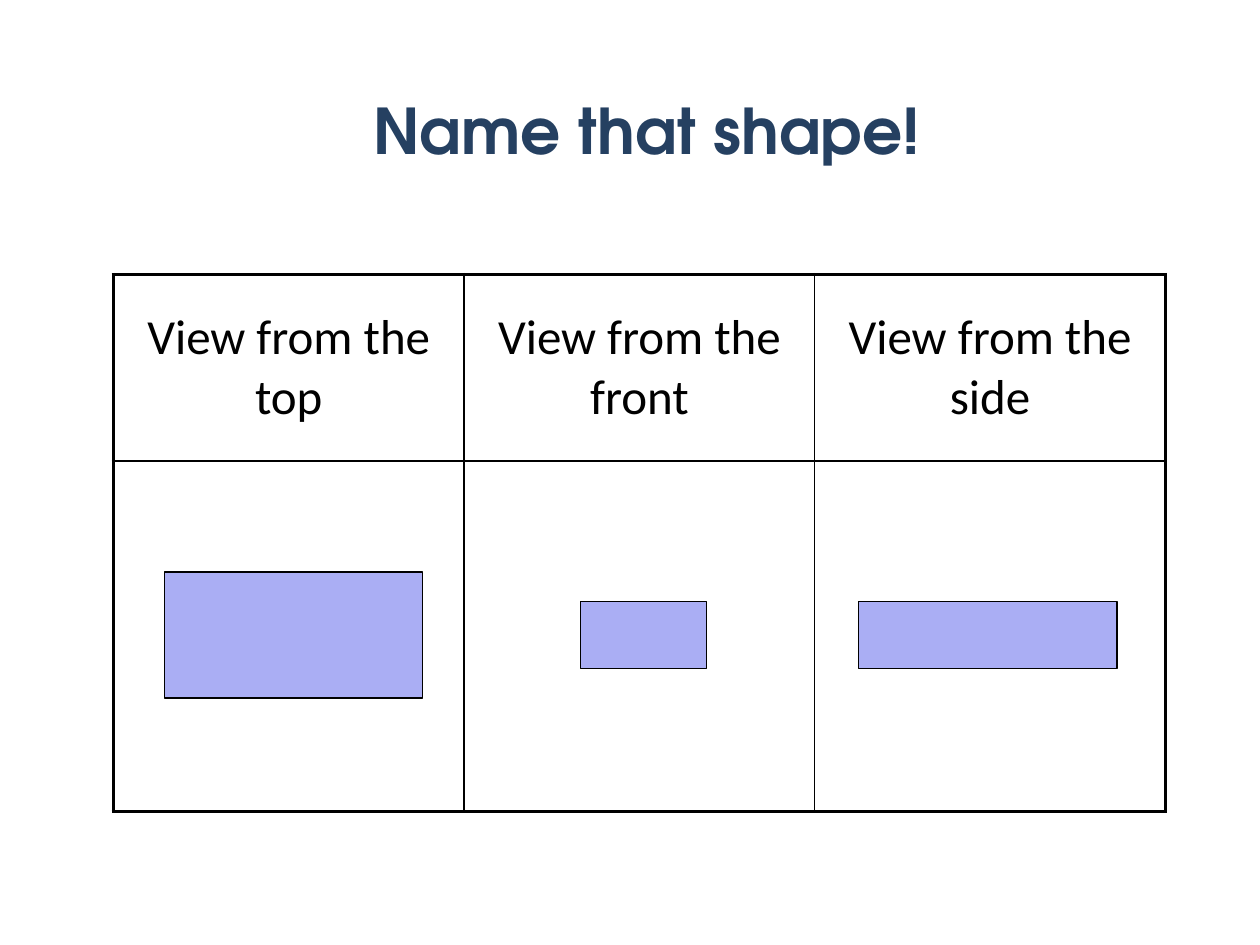
from lxml import etree
from pptx import Presentation
from pptx.dml.color import RGBColor
from pptx.enum import shapes, text
from pptx.oxml import ns
from pptx.util import Inches, Pt

COLORS = {"title": "254061", "ink": "000000", "view": "AAAEF4"}
HEADINGS = ["View from the top", "View from the front", "View from the side"]
VIEWS = [(2.33, 2.05, 1), (5.11, 1, 0.53), (7.84, 2.05, 0.53)]
VIEW_MIDDLE = 5.04


def color(name):
    """Return the named colour."""
    return RGBColor.from_string(COLORS[name])


def write_text(frame, words, font, size, ink="ink", bold=False, before=0):
    """Write one centred paragraph into a text frame."""
    paragraph = frame.paragraphs[0]
    paragraph.alignment = text.PP_ALIGN.CENTER
    paragraph.space_before = Pt(before)
    run = paragraph.add_run()
    run.text = words
    run.font.name = font
    run.font.size = Pt(size)
    run.font.bold = bold
    run.font.color.rgb = color(ink)


def set_border(cell, side, width):
    """Draw one side of a cell's border."""
    properties = cell._tc.get_or_add_tcPr()
    line = etree.SubElement(properties, ns.qn(f"a:ln{side}"), w=str(Pt(width)))
    fill = etree.SubElement(line, ns.qn("a:solidFill"))
    etree.SubElement(fill, ns.qn("a:srgbClr"), val=COLORS["ink"])


def add_title(slide, left, top, width, height):
    """Add the slide title."""
    box = slide.shapes.add_textbox(Inches(left), Inches(top), Inches(width), Inches(height))
    box.text_frame.word_wrap = False
    write_text(box.text_frame, "Name that shape!", "TeX Gyre Adventor", 36, "title", bold=True)


def add_view_table(slide, left, top, width, row_heights):
    """Add the table of headings with a thick outer border."""
    rows, columns = len(row_heights), len(HEADINGS)
    frame = slide.shapes.add_table(rows, columns, Inches(left), Inches(top),
                                   Inches(width), Inches(sum(row_heights)))
    table = frame.table
    table.first_row = table.horz_banding = False
    for row, height in enumerate(row_heights):
        table.rows[row].height = Inches(height)
        for column in range(columns):
            cell = table.cell(row, column)
            cell.vertical_anchor = text.MSO_ANCHOR.MIDDLE
            outer = {"L": column == 0, "R": column == columns - 1,
                     "T": row == 0, "B": row == rows - 1}
            for side, is_outer in outer.items():
                set_border(cell, side, 2.25 if is_outer else 1)
            cell.fill.background()
            if row == 0:
                write_text(cell.text_frame, HEADINGS[column], "Calibri", 28, before=5.6)


def add_view(slide, center, middle, width, height):
    """Add one view of the solid, centred on a point."""
    shape = slide.shapes.add_shape(shapes.MSO_SHAPE.RECTANGLE,
                                   Inches(center - width / 2), Inches(middle - height / 2),
                                   Inches(width), Inches(height))
    shape.shadow.inherit = False
    shape.fill.solid()
    shape.fill.fore_color.rgb = color("view")
    shape.line.color.rgb = color("ink")
    shape.line.width = Pt(0.75)


def main():
    """Build and save the slide."""
    presentation = Presentation()
    presentation.slide_width, presentation.slide_height = Inches(10), Inches(7.5)
    slide = presentation.slides.add_slide(presentation.slide_layouts[6])
    add_view_table(slide, 0.9, 2.18, 8.35, [1.48, 2.78])
    for center, width, height in VIEWS:
        add_view(slide, center, VIEW_MIDDLE, width, height)
    add_title(slide, 2.38, 0.68, 5.51, 0.71)
    presentation.save("out.pptx")


if __name__ == "__main__":
    main()
